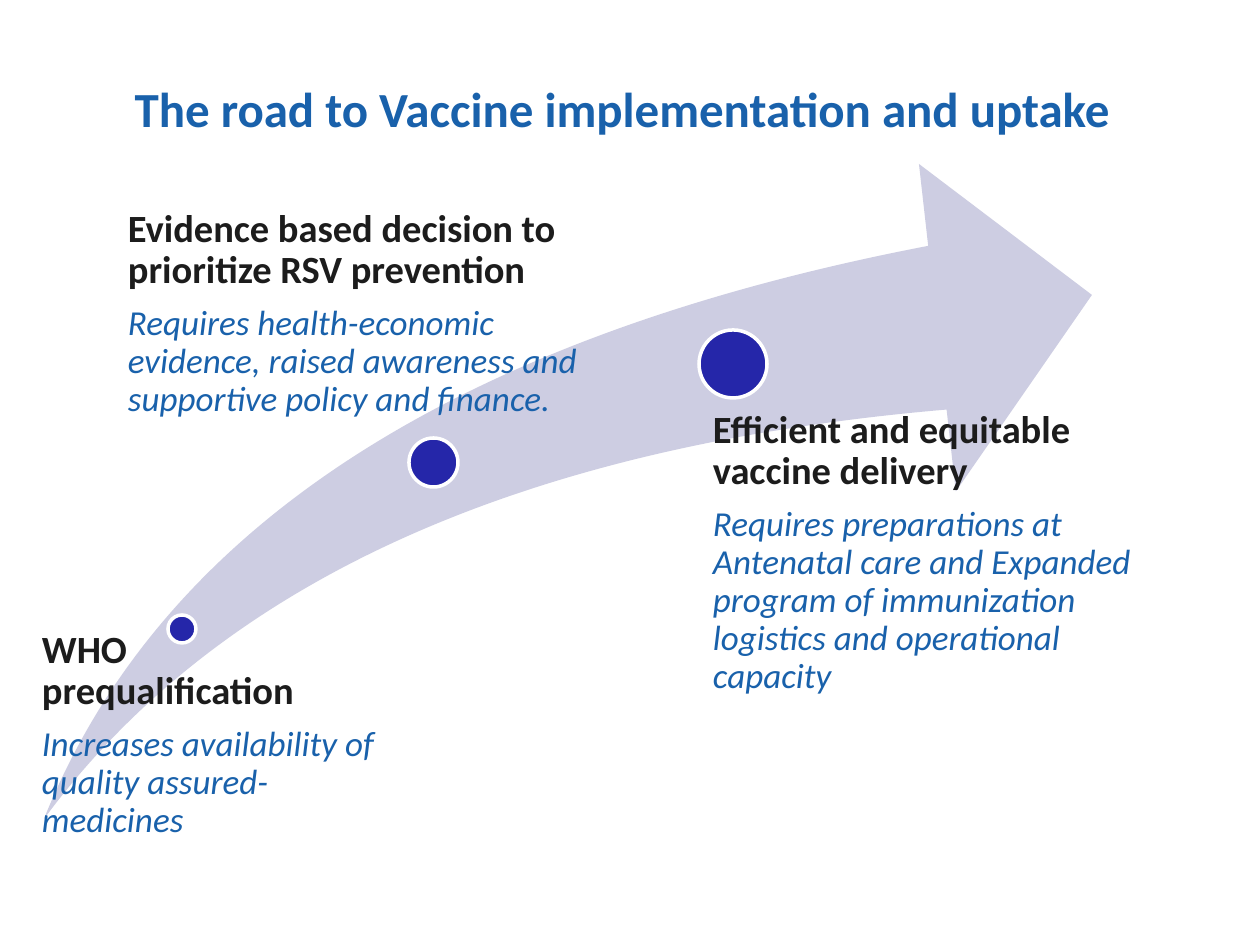
from dataclasses import dataclass

from pptx import Presentation
from pptx.dml.color import RGBColor
from pptx.enum.shapes import MSO_SHAPE
from pptx.enum.text import MSO_ANCHOR, MSO_AUTO_SIZE, PP_ALIGN
from pptx.shapes.autoshape import Shape
from pptx.slide import Slide
from pptx.text.text import TextFrame
from pptx.util import Emu, Pt

SWOOSH = MSO_SHAPE.SWOOSH_ARROW
OVAL = MSO_SHAPE.OVAL
TOP = MSO_ANCHOR.TOP
MIDDLE = MSO_ANCHOR.MIDDLE
CENTER = PP_ALIGN.CENTER
NO_FIT = MSO_AUTO_SIZE.NONE

BLUE = RGBColor(0x19, 0x61, 0xAB)
NAVY = RGBColor(0x25, 0x26, 0xA9)
LILAC = RGBColor(0xCD, 0xCD, 0xE2)
BLACK = RGBColor(0x1C, 0x1C, 0x1C)
WHITE = RGBColor(0xFF, 0xFF, 0xFF)

FONT = "Calibri"
SCALE = 914400 / 126


@dataclass(frozen=True)
class Box:
    left: int
    top: int
    width: int
    height: int

    def emu(self) -> list[Emu]:
        return [px(n) for n in (self.left, self.top, self.width, self.height)]


@dataclass(frozen=True)
class Step:
    dot: Box
    box: Box
    inset: int
    head: str
    body: str


STEPS = [
    Step(Box(168, 615, 28, 28), Box(28, 630, 350, 189), 14,
         "WHO prequalification",
         "Increases availability of quality assured-medicines"),
    Step(Box(409, 438, 49, 49), Box(102, 209, 517, 357), 26,
         "Evidence based decision to prioritize RSV prevention",
         "Requires health-economic evidence, raised awareness and "
         "supportive policy and finance."),
    Step(Box(699, 330, 68, 68), Box(677, 410, 465, 357), 36,
         "Efficient and equitable vaccine delivery",
         "Requires preparations at Antenatal care and Expanded program of "
         "immunization logistics and operational capacity"),
]


def px(count: int) -> Emu:
    return Emu(round(count * SCALE))


def write(frame: TextFrame, text: str, *, size: int, color: RGBColor,
          bold: bool = False, italic: bool = False,
          align: PP_ALIGN | None = None, line: float | None = None,
          after: float | None = None) -> None:
    para = frame.paragraphs[0]
    if para.runs:
        para = frame.add_paragraph()
    para.alignment = align
    para.line_spacing = line
    if after is not None:
        para.space_after = Pt(after)
    run = para.add_run()
    run.text = text
    font = run.font
    font.name = FONT
    font.size = Pt(size)
    font.bold = bold
    font.italic = italic
    font.color.rgb = color


def draw_shape(slide: Slide, kind: MSO_SHAPE, box: Box,
               fill: RGBColor, edge: RGBColor | None = None) -> Shape:
    shape = slide.shapes.add_shape(kind, *box.emu())
    shape.shadow.inherit = False
    shape.fill.solid()
    shape.fill.fore_color.rgb = fill
    if edge is None:
        shape.line.fill.background()
    else:
        shape.line.color.rgb = edge
        shape.line.width = Pt(2)
    return shape


def draw_title(slide: Slide, text: str, box: Box) -> None:
    title = slide.shapes.title
    title.left, title.top, title.width, title.height = box.emu()
    frame = title.text_frame
    frame.auto_size = NO_FIT
    frame.vertical_anchor = MIDDLE
    write(frame, text, size=28, color=BLUE, bold=True, align=CENTER)


def draw_step(slide: Slide, step: Step) -> None:
    draw_shape(slide, OVAL, step.dot, NAVY, WHITE)
    frame = slide.shapes.add_textbox(*step.box.emu()).text_frame
    frame.word_wrap = True
    frame.vertical_anchor = TOP
    frame.margin_left = px(step.inset)
    frame.margin_top = frame.margin_right = frame.margin_bottom = 0
    write(frame, step.head, size=22, color=BLACK, bold=True,
          line=0.9, after=7.7)
    write(frame, step.body, size=20, color=BLUE, italic=True,
          line=0.9, after=7)


def main() -> None:
    deck = Presentation()
    deck.slide_width, deck.slide_height = px(1260), px(945)
    slide = deck.slides.add_slide(deck.slide_layouts[5])
    draw_title(slide, "The road to Vaccine implementation and uptake",
               Box(102, 52, 1040, 112))
    arrow = draw_shape(slide, SWOOSH, Box(44, 164, 1048, 655), LILAC)
    arrow.adjustments[0] = arrow.adjustments[1] = 0.25
    for step in STEPS:
        draw_step(slide, step)
    deck.save("out.pptx")


if __name__ == "__main__":
    main()
